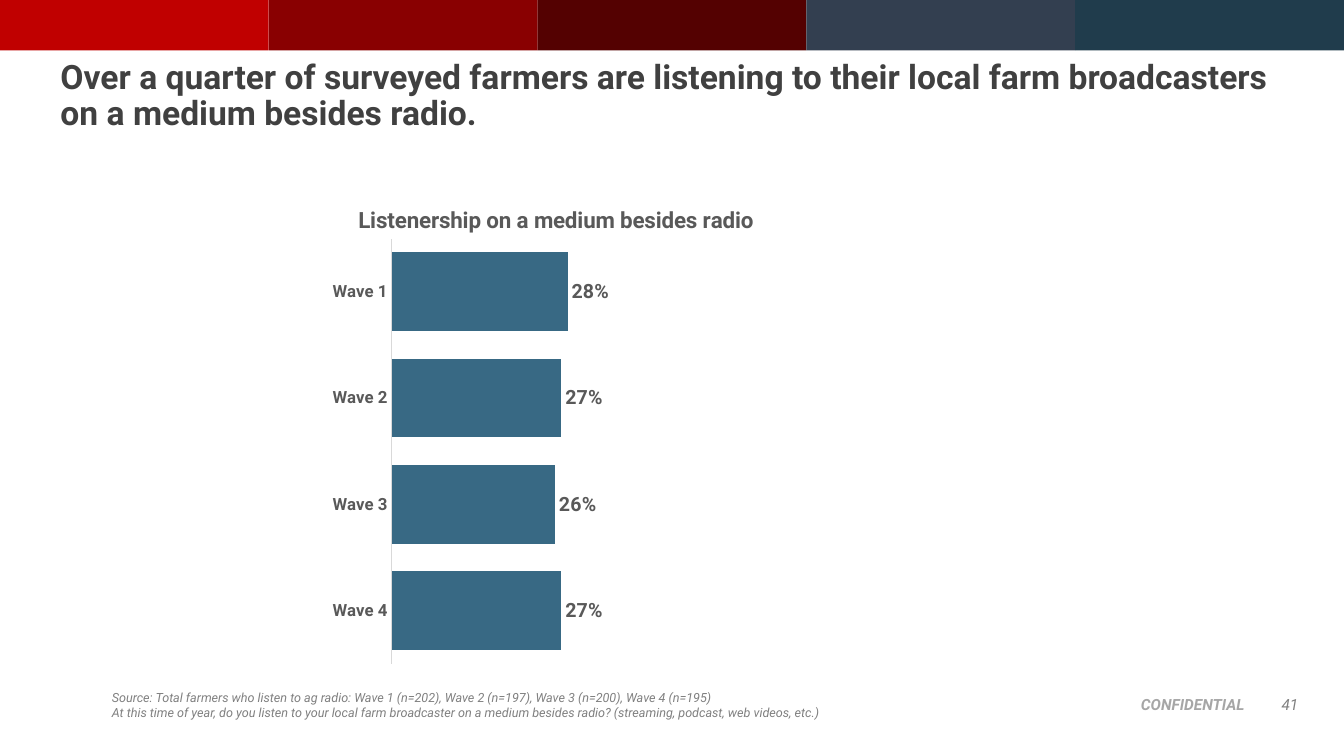
"""Build the slide on farm broadcast listening beyond radio."""
from lxml import etree
from pptx import Presentation
from pptx.chart import data
from pptx.dml import color
from pptx.enum import chart as charts, shapes, text
from pptx.oxml import ns
from pptx.util import Cm, Pt

COLORS = {
    "strips": ["C00000", "890001", "540101", "333F50", "203C4C"],
    "title": "404040",
    "chart text": "595959",
    "bar": "386984",
    "axis": "D9D9D9",
    "note": "808080",
    "confidential": "A6A6A6",
}


def style(font, size, shade, bold=False, italic=False):
    font.name = "Roboto"
    font.size = Pt(size)
    font.bold = bold
    font.italic = italic
    font.color.rgb = color.RGBColor.from_string(COLORS[shade])


deck = Presentation()
deck.slide_width, deck.slide_height = Cm(33.87), Cm(19.05)
page = deck.slides.add_slide(deck.slide_layouts[5])

strip_width = 33.87 / len(COLORS["strips"])
for index, shade in enumerate(COLORS["strips"]):
    strip = page.shapes.add_shape(
        shapes.MSO_SHAPE.RECTANGLE,
        Cm(index * strip_width), Cm(0), Cm(strip_width), Cm(1.27))
    strip.shadow.inherit = False
    strip.fill.solid()
    strip.fill.fore_color.rgb = color.RGBColor.from_string(shade)
    strip.line.fill.background()

title = page.shapes.title
title.left, title.top, title.width, title.height = Cm(1.27), Cm(1.4), Cm(31.32), Cm(3.2)
title.text_frame.word_wrap = True
title.text_frame.auto_size = text.MSO_AUTO_SIZE.NONE
title.text_frame.vertical_anchor = text.MSO_ANCHOR.TOP
para = title.text_frame.paragraphs[0]
para.alignment = text.PP_ALIGN.LEFT
para.line_spacing = 0.9
span = para.add_run()
span.text = ("Over a quarter of surveyed farmers are listening to their local "
             "farm broadcasters on a medium besides radio.")
style(span.font, 24, "title", bold=True)

waves = data.CategoryChartData(number_format="0%")
waves.categories = ["Wave 4", "Wave 3", "Wave 2", "Wave 1"]
waves.add_series("Series 1", [0.27, 0.26, 0.27, 0.28])
chart = page.shapes.add_chart(
    charts.XL_CHART_TYPE.BAR_CLUSTERED,
    Cm(1.3), Cm(4.57), Cm(25.43), Cm(12.65), waves).chart
chart.has_legend = False
style(chart.font, 10, "chart text")

chart.has_title = True
span = chart.chart_title.text_frame.paragraphs[0].add_run()
span.text = "Listenership on a medium besides radio"
style(span.font, 16, "chart text", bold=True)
chart.chart_title.include_in_layout = False

category_axis = chart.category_axis
category_axis.major_tick_mark = charts.XL_TICK_MARK.NONE
category_axis.has_major_gridlines = False
category_axis.format.line.color.rgb = color.RGBColor.from_string(COLORS["axis"])
category_axis.format.line.width = Pt(0.75)
style(category_axis.tick_labels.font, 12, "chart text", bold=True)

value_axis = chart.value_axis
value_axis.minimum_scale, value_axis.maximum_scale = 0, 1
value_axis.major_unit = 0.2
value_axis.has_major_gridlines = False
value_axis.visible = False

plot = chart.plots[0]
plot.gap_width = 35
plot.vary_by_categories = False
bars = plot.series[0]
bars.format.fill.solid()
bars.format.fill.fore_color.rgb = color.RGBColor.from_string(COLORS["bar"])
labels = bars.data_labels
labels.show_value = True
labels.number_format = "0%"
labels.number_format_is_linked = False
labels.position = charts.XL_LABEL_POSITION.OUTSIDE_END
style(labels.font, 14, "chart text", bold=True)

plot_area = chart._chartSpace.chart.plotArea
for old in plot_area.findall(ns.qn("c:layout")):
    plot_area.remove(old)
title_element = chart.chart_title._element
for old in title_element.findall(ns.qn("c:layout")):
    title_element.remove(old)
placements = [
    (plot_area, 0, {"layoutTarget": "inner", "xMode": "edge", "yMode": "edge",
                    "x": 0.34, "y": 0.11, "w": 0.62, "h": 0.85}),
    (title_element, 1, {"xMode": "edge", "yMode": "edge", "x": 0.3, "y": 0.04}),
]
placements[0][2].update(x=0.337, y=0.114, w=0.623, h=0.847)
for parent, position, settings in placements:
    layout = etree.Element(ns.qn("c:layout"))
    manual = etree.SubElement(layout, ns.qn("c:manualLayout"))
    for tag, value in settings.items():
        etree.SubElement(manual, ns.qn(f"c:{tag}")).set("val", str(value))
    parent.insert(position, layout)

left, right = text.PP_ALIGN.LEFT, text.PP_ALIGN.RIGHT
top, middle = text.MSO_ANCHOR.TOP, text.MSO_ANCHOR.MIDDLE
source_lines = [
    "Source: Total farmers who listen to ag radio: Wave 1 (n=202), Wave 2 (n=197), "
    "Wave 3 (n=200), Wave 4 (n=195)",
    "At this time of year, do you listen to your local farm broadcaster on a medium "
    "besides radio? (streaming, podcast, web videos, etc.)",
]
footers = [
    (2.57, 17.25, 24.18, 1.02, source_lines, 9, "note", False, left, top),
    (27.89, 17.4, 3.73, 0.74, ["CONFIDENTIAL"], 11, "confidential", True, right, top),
    (31.55, 17.25, 1.42, 1.02, ["41"], 11, "note", False, right, middle),
]
for x, y, width, height, lines, size, shade, bold, align, anchor in footers:
    box = page.shapes.add_textbox(Cm(x), Cm(y), Cm(width), Cm(height))
    frame = box.text_frame
    frame.word_wrap = True
    frame.vertical_anchor = anchor
    for index, line in enumerate(lines):
        para = frame.add_paragraph() if index else frame.paragraphs[0]
        para.alignment = align
        span = para.add_run()
        span.text = line
        style(span.font, size, shade, bold=bold, italic=True)

deck.save("out.pptx")
